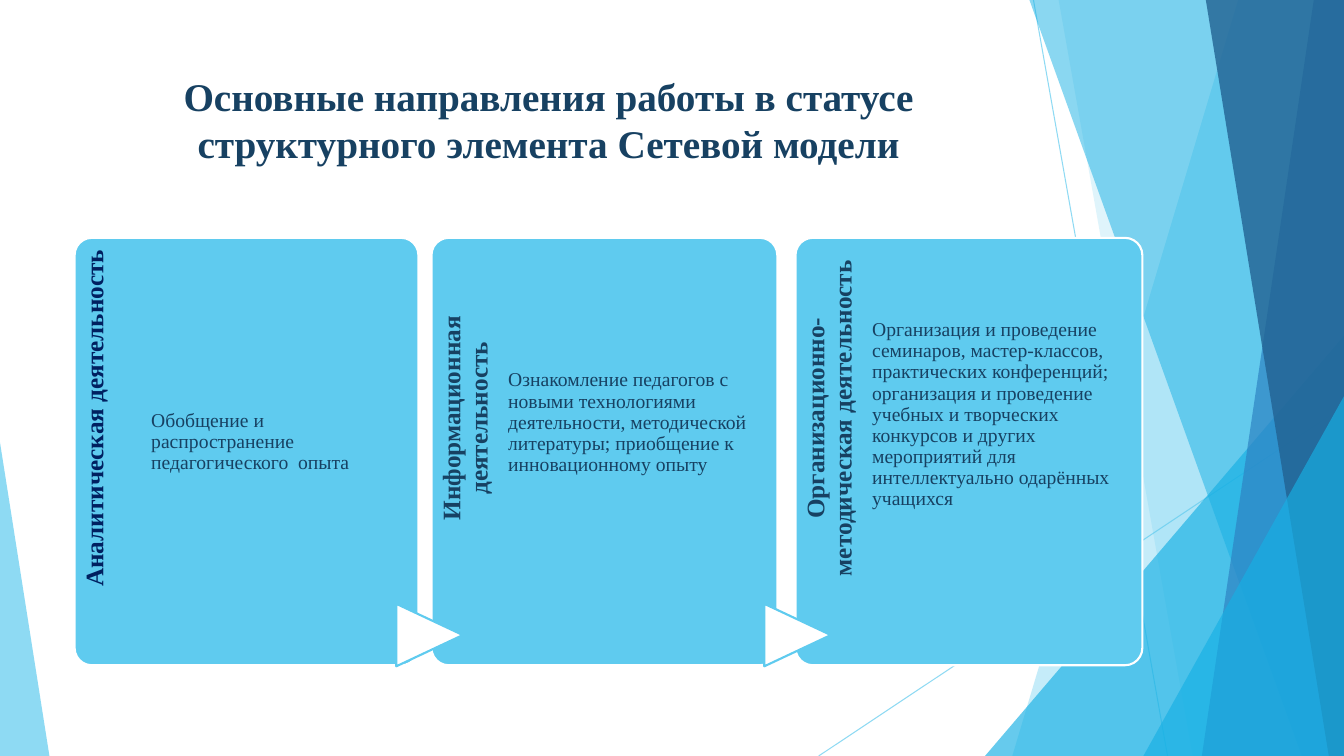
from dataclasses import dataclass

import lxml.etree
import pptx
import pptx.dml.color
import pptx.enum.shapes
import pptx.enum.text
import pptx.oxml
import pptx.oxml.ns
import pptx.util

Inches = pptx.util.Inches
Pt = pptx.util.Pt
Shapes = pptx.enum.shapes.MSO_SHAPE
Align = pptx.enum.text.PP_ALIGN
qn = pptx.oxml.ns.qn

WIDTH, HEIGHT = 13.33, 7.5
FONT = "Times New Roman"
COLORS = {
    "sky": "5FCBEF",
    "cyan": "17B0E4",
    "blue": "2E83C3",
    "deep": "226292",
    "text": "174162",
    "navy": "002060",
    "white": "FFFFFF",
}
CARD_TOP, CARD_HEIGHT = 2.36, 4.24
LABEL_LENGTH, LABEL_DEPTH = 3.48, 0.69


@dataclass
class Ray:
    start: tuple[float, float]
    end: tuple[float, float]


@dataclass
class Band:
    top_x: float
    bottom_x: float
    color: str
    alpha: int


@dataclass
class Corner:
    left: float
    top: float
    width: float
    apex: float
    color: str
    alpha: int


@dataclass
class Card:
    left: float
    width: float
    label: str
    label_color: str
    body: str
    body_left: float
    body_top: float
    body_width: float


RAYS = [Ray((10.25, 0), (11.58, HEIGHT)), Ray((WIDTH, 4.03), (8.12, HEIGHT))]
FACETS = [
    Band(12.28, 10.04, "sky", 36),
    Band(10.5, 11.83, "sky", 20),
    Corner(9.77, 3.33, 3.56, 1, "cyan", 66),
    Band(10.21, 12.91, "cyan", 50),
    Band(13.03, 11.92, "blue", 70),
    Band(11.96, 13.18, "deep", 80),
    Corner(11.34, 3.93, 1.99, 1, "cyan", 66),
    Corner(0, 4.39, 0.49, 0, "sky", 70),
]
CARDS = [
    Card(0.74, 3.41, "Аналитическая деятельность", "navy",
         "Обобщение и распространение педагогического  опыта", 1.5, 4.0, 2.54),
    Card(4.28, 3.43, "Информационная деятельность", "text",
         "Ознакомление педагогов с новыми технологиями деятельности, методической "
         "литературы; приобщение к инновационному опыту", 5.04, 3.6, 2.55),
    Card(7.89, 3.44, "Организационно-методическая деятельность", "text",
         "Организация и проведение семинаров, мастер-классов, практических конференций; "
         "организация и проведение учебных и творческих конкурсов и других мероприятий "
         "для интеллектуально одарённых учащихся", 8.65, 3.1, 2.57),
]
ARROW_LEFTS = [3.95, 7.6]


def rgb(name: str) -> pptx.dml.color.RGBColor:
    return pptx.dml.color.RGBColor.from_string(COLORS[name])


def set_alpha(shape, percent: int) -> None:
    for color in shape._element.spPr.iter(qn("a:srgbClr")):
        lxml.etree.SubElement(color, qn("a:alpha"), val=str(percent * 1000))


def paint(shape, fill: str, line: str | None = None) -> None:
    shape.shadow.inherit = False
    shape.fill.solid()
    shape.fill.fore_color.rgb = rgb(fill)
    if line is None:
        shape.line.fill.background()
    else:
        shape.line.color.rgb = rgb(line)
        shape.line.width = Pt(1.5)


def add_ray(slide, ray: Ray) -> None:
    points = [Inches(value) for value in (*ray.start, *ray.end)]
    connector = slide.shapes.add_connector(pptx.enum.shapes.MSO_CONNECTOR.STRAIGHT, *points)
    connector.line.color.rgb = rgb("sky")
    connector.line.width = Pt(0.75)
    set_alpha(connector, 70)
    lxml.etree.SubElement(connector._element.spPr, qn("a:effectLst"))


def add_facet(slide, facet: Band | Corner) -> None:
    if isinstance(facet, Band):
        builder = slide.shapes.build_freeform(Inches(facet.top_x), 0)
        corners = [(WIDTH, 0), (WIDTH, HEIGHT), (facet.bottom_x, HEIGHT)]
        builder.add_line_segments([(Inches(x), Inches(y)) for x, y in corners], close=True)
        shape = builder.convert_to_shape()
    else:
        shape = slide.shapes.add_shape(
            Shapes.ISOSCELES_TRIANGLE, Inches(facet.left), Inches(facet.top),
            Inches(facet.width), Inches(HEIGHT - facet.top))
        shape.adjustments[0] = facet.apex
    paint(shape, facet.color)
    set_alpha(shape, facet.alpha)


def write(frame, text: str, size: int, color: str, bold: bool, align, spacing: float) -> None:
    frame.word_wrap = True
    frame.auto_size = pptx.enum.text.MSO_AUTO_SIZE.NONE
    frame.vertical_anchor = pptx.enum.text.MSO_ANCHOR.TOP
    frame.text = text
    paragraph = frame.paragraphs[0]
    paragraph.alignment = align
    paragraph.line_spacing = spacing
    paragraph.font.name = FONT
    paragraph.font.size = Pt(size)
    paragraph.font.bold = bold
    paragraph.font.color.rgb = rgb(color)


def add_text(slide, left: float, top: float, width: float, height: float, right_inset: float):
    box = slide.shapes.add_textbox(Inches(left), Inches(top), Inches(width), Inches(height))
    frame = box.text_frame
    frame.margin_left = frame.margin_bottom = 0
    frame.margin_top = Inches(0.07)
    frame.margin_right = Inches(right_inset)
    return box


def add_card(slide, card: Card) -> None:
    panel = slide.shapes.add_shape(
        Shapes.ROUNDED_RECTANGLE, Inches(card.left), Inches(CARD_TOP),
        Inches(card.width), Inches(CARD_HEIGHT))
    panel.adjustments[0] = 0.05
    paint(panel, "sky", "white")

    label_left = card.left - (LABEL_LENGTH - LABEL_DEPTH) / 2
    label = add_text(slide, label_left, 3.76, LABEL_LENGTH, LABEL_DEPTH, 0.09)
    label.rotation = 270
    write(label.text_frame, card.label, 18, card.label_color, True, Align.CENTER, 0.9)

    body_height = CARD_TOP + CARD_HEIGHT - card.body_top
    body = add_text(slide, card.body_left, card.body_top, card.body_width, body_height, 0)
    write(body.text_frame, card.body, 14, "text", False, Align.LEFT, 0.9)


def add_arrow(slide, left: float) -> None:
    arrow = slide.shapes.add_shape(
        Shapes.FLOWCHART_EXTRACT, Inches(left), Inches(5.97), Inches(0.62), Inches(0.66))
    arrow.rotation = 90
    paint(arrow, "white", "sky")


def main() -> None:
    presentation = pptx.Presentation()
    presentation.slide_width = Inches(WIDTH)
    presentation.slide_height = Inches(HEIGHT)
    slide = presentation.slides.add_slide(presentation.slide_layouts[5])
    for ray in RAYS:
        add_ray(slide, ray)
    for facet in FACETS:
        add_facet(slide, facet)
    title = slide.shapes.title
    title.left, title.top = Inches(0.74), Inches(0.67)
    title.width, title.height = Inches(9.4), Inches(1.44)
    write(title.text_frame,
          "Основные направления работы в статусе структурного элемента Сетевой модели",
          28, "text", True, Align.CENTER, 1.0)
    for card in CARDS:
        add_card(slide, card)
    for left in ARROW_LEFTS:
        add_arrow(slide, left)
    presentation.save("out.pptx")


if __name__ == "__main__":
    main()
